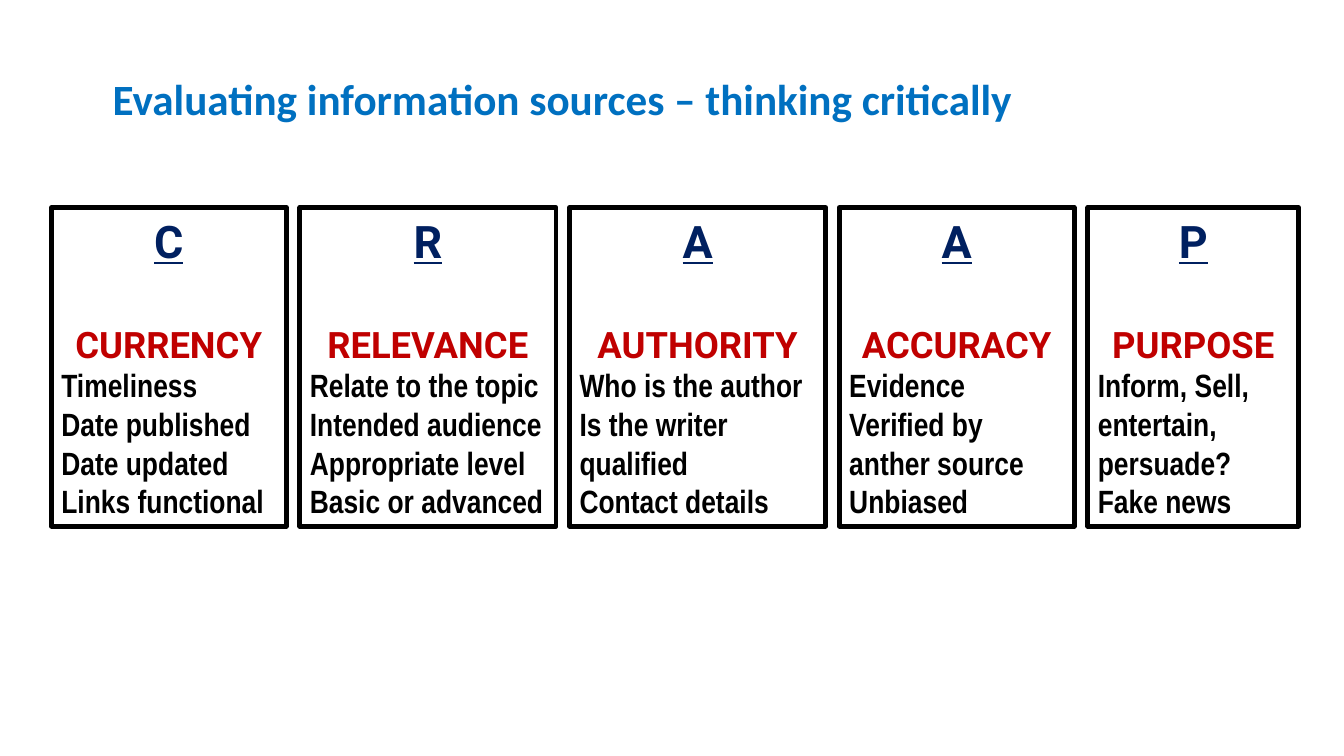
from dataclasses import dataclass

import pptx
import pptx.dml.color
import pptx.enum.shapes
import pptx.enum.text
import pptx.util


@dataclass(frozen=True)
class Theme:
    """Colours, fonts and type sizes of the slide."""
    title_color: str = "0070C0"
    letter_color: str = "002060"
    heading_color: str = "C00000"
    ink: str = "000000"
    title_font: str = "Calibri"
    heading_font: str = "Roboto"
    body_font: str = "Arial Narrow"
    title_size: float = 30.8
    letter_size: float = 32
    heading_size: float = 26
    body_size: float = 23
    heading_gap: float = 39
    border: float = 3.5


THEME = Theme()
SLIDE_WIDTH, SLIDE_HEIGHT = 13.33, 7.5
TITLE_BOX = (1.02, 0.58, 10.94, 0.91)
CARD_ROW = (0.51, 2.06, 12.37, 3.16)

CARDS = [
    ("CURRENCY", 2.33, ["Timeliness", "Date published Date updated", "Links functional"]),
    ("RELEVANCE", 2.54, ["Relate to the topic", "Intended audience",
                         "Appropriate level", "Basic or advanced"]),
    ("AUTHORITY", 2.54, ["Who is the author", "Is the writer qualified", "Contact details"]),
    ("ACCURACY", 2.33, ["Evidence", "Verified by\vanther source", "Unbiased"]),
    ("PURPOSE", 2.09, ["Inform, Sell, entertain, persuade?", "Fake news"]),
]


def write_paragraph(paragraph, text, font_name, size, color, centered=False, underline=False):
    """Fill a paragraph with bold text in the given style."""
    alignment = pptx.enum.text.PP_ALIGN
    paragraph.text = text
    paragraph.alignment = alignment.CENTER if centered else alignment.LEFT
    for run in paragraph.runs:
        run.font.name = font_name
        run.font.size = pptx.util.Pt(size)
        run.font.bold = True
        run.font.underline = underline
        run.font.color.rgb = pptx.dml.color.RGBColor.from_string(color)


def add_title(slide, box, text):
    """Place the slide title in the box."""
    shape = slide.shapes.add_textbox(*map(pptx.util.Inches, box))
    frame = shape.text_frame
    frame.word_wrap = True
    frame.vertical_anchor = pptx.enum.text.MSO_ANCHOR.MIDDLE
    paragraph = frame.paragraphs[0]
    write_paragraph(paragraph, text, THEME.title_font, THEME.title_size, THEME.title_color)
    paragraph.line_spacing = 0.7


def add_card(slide, box, heading, points):
    """Place one outlined card with its initial, heading and points."""
    shape = slide.shapes.add_shape(
        pptx.enum.shapes.MSO_SHAPE.RECTANGLE, *map(pptx.util.Inches, box))
    shape.shadow.inherit = False
    shape.fill.background()
    shape.line.color.rgb = pptx.dml.color.RGBColor.from_string(THEME.ink)
    shape.line.width = pptx.util.Pt(THEME.border)
    frame = shape.text_frame
    frame.word_wrap = True
    frame.vertical_anchor = pptx.enum.text.MSO_ANCHOR.MIDDLE
    write_paragraph(frame.paragraphs[0], heading[0], THEME.heading_font, THEME.letter_size,
                    THEME.letter_color, centered=True, underline=True)
    heading_paragraph = frame.add_paragraph()
    write_paragraph(heading_paragraph, heading, THEME.heading_font, THEME.heading_size,
                    THEME.heading_color, centered=True)
    heading_paragraph.space_before = pptx.util.Pt(THEME.heading_gap)
    for point in points:
        write_paragraph(frame.add_paragraph(), point, THEME.body_font, THEME.body_size, THEME.ink)


def add_card_row(slide, box, cards):
    """Spread the cards across the box with equal gaps."""
    left, top, width, height = box
    gap = (width - sum(card_width for _, card_width, _ in cards)) / (len(cards) - 1)
    for heading, card_width, points in cards:
        add_card(slide, (left, top, card_width, height), heading, points)
        left += card_width + gap


def main():
    """Build and save the presentation."""
    presentation = pptx.Presentation()
    presentation.slide_width = pptx.util.Inches(SLIDE_WIDTH)
    presentation.slide_height = pptx.util.Inches(SLIDE_HEIGHT)
    slide = presentation.slides.add_slide(presentation.slide_layouts[6])
    add_title(slide, TITLE_BOX, "Evaluating information sources – thinking critically")
    add_card_row(slide, CARD_ROW, CARDS)
    presentation.save("out.pptx")


if __name__ == "__main__":
    main()
